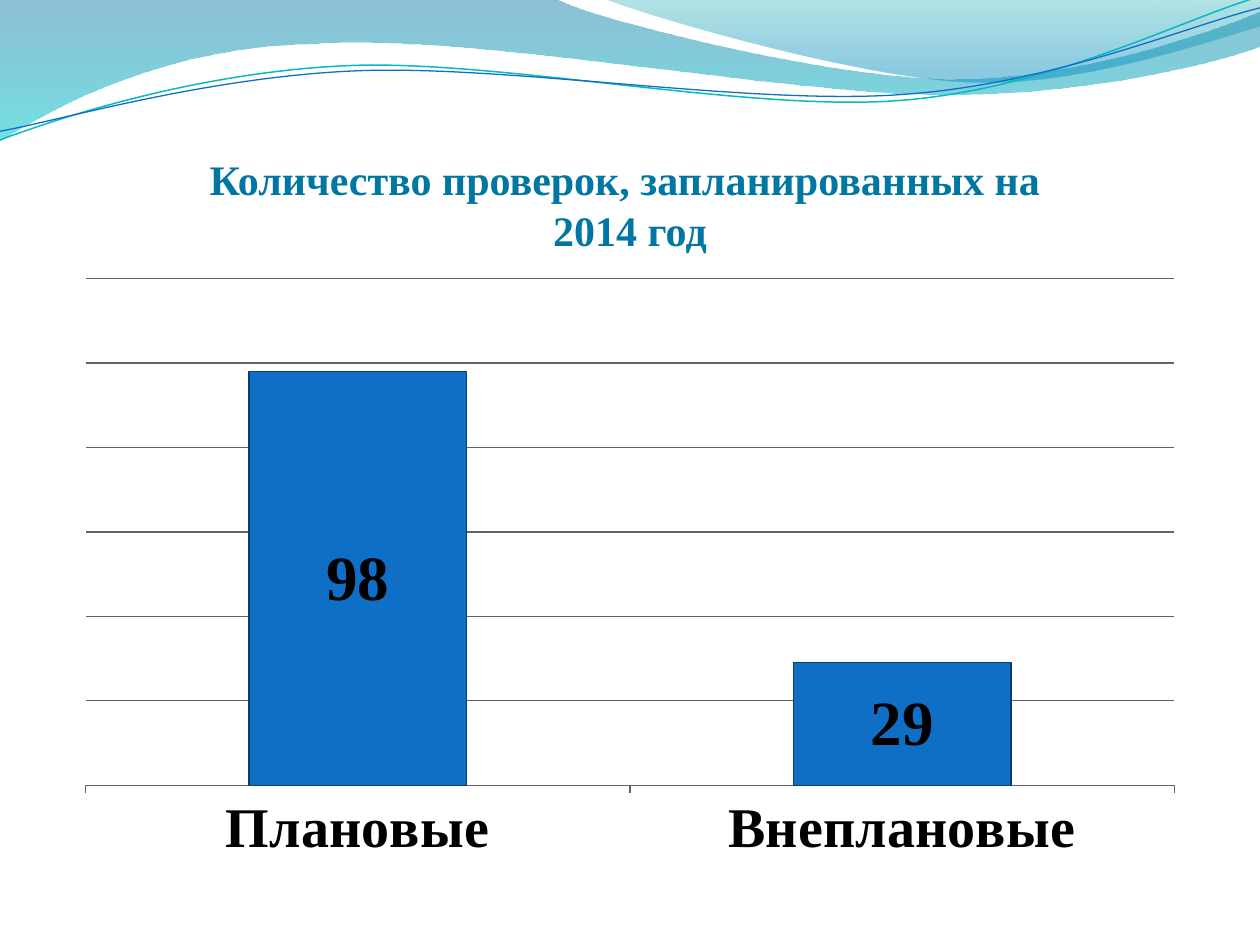
from math import cos, radians, sin

from lxml import etree
from pptx import Presentation
from pptx.chart.data import CategoryChartData
from pptx.dml.color import RGBColor
from pptx.enum.chart import XL_CHART_TYPE, XL_LABEL_POSITION, XL_TICK_LABEL_POSITION, XL_TICK_MARK
from pptx.enum.text import MSO_ANCHOR, PP_ALIGN
from pptx.oxml.ns import qn
from pptx.util import Pt

STACKED = XL_CHART_TYPE.COLUMN_STACKED
LABEL_CENTER = XL_LABEL_POSITION.CENTER
LABELS_LOW = XL_TICK_LABEL_POSITION.LOW
TICK_OUTSIDE, TICK_NONE = XL_TICK_MARK.OUTSIDE, XL_TICK_MARK.NONE
BOTTOM, CENTER = MSO_ANCHOR.BOTTOM, PP_ALIGN.CENTER

TITLE_BLUE = RGBColor(0x00, 0x76, 0xA3)
BLUE = RGBColor(0x0F, 0x6F, 0xC6)
DARK_BLUE = RGBColor(0x0A, 0x3C, 0x6C)
TEAL = RGBColor(0x0A, 0xB8, 0xBF)
BLACK = RGBColor(0x00, 0x00, 0x00)
GRAY = RGBColor(0x64, 0x64, 0x64)
WAVE_TOP, WAVE_BOTTOM = RGBColor(0x00, 0x74, 0xA1), RGBColor(0x00, 0xC6, 0xCF)
CREST_TOP, CREST_BOTTOM = RGBColor(0x00, 0xA1, 0xA9), RGBColor(0x00, 0x8B, 0xBF)
FONT, BODY_FONT = "Times New Roman", "Vollkorn"

# Content
TITLE_LINES = ["Количество проверок, запланированных на ", "2014 год"]
INSPECTIONS = {"Плановые": 98, "Внеплановые": 29}

# Outlines in points: one point is a straight step, three points are a cubic curve
# Gradient stops: position %, colour, opacity %
FILLED_WAVES = [
    {"start": (0, 0),
     "steps": [[(317, -1)],
               [(343, 12), (478, 45), (546, 45)],
               [(614, 45), (690, 19), (720, 6.5)],
               [(721, 26)],
               [(708, 32), (626, 55), (537, 54)],
               [(448, 54), (275, 20), (185, 24.5)],
               [(93, 26), (33, 60), (-1, 81)]],
     "stops": [(0, WAVE_TOP, 45), (100, WAVE_BOTTOM, 55)]},
    {"start": (345, -1),
     "steps": [[(366, 8), (491, 45), (554, 47)],
               [(616, 50), (692, 23), (720, 15)],
               [(720, 0)]],
     "stops": [(0, CREST_TOP, 30), (80, CREST_BOTTOM, 45)]},
]
LINE_TILT = -2.7
LINE_WAVES = [
    {"start": (0, 80),
     "steps": [[(34.5, 67), (114, 41), (199.5, 37.5)],
               [(284.5, 34), (427, 64), (513.5, 57.5)],
               [(600, 51), (675.5, 11), (718.5, -1.5)]],
     "pivot": (359.3, 41.4), "color": TEAL, "width": 0.85},
    {"start": (0, 75),
     "steps": [[(34, 69), (118, 44), (204, 40.5)],
               [(290, 37), (430, 60.5), (516, 54)],
               [(602, 48), (677.5, 15), (720, 4.5)]],
     "pivot": (359.6, 42.5), "color": BLUE, "width": 0.75},
]


def turn(point, pivot, degrees):
    angle = radians(degrees)
    x, y = point[0] - pivot[0], point[1] - pivot[1]
    return (pivot[0] + x * cos(angle) - y * sin(angle),
            pivot[1] + x * sin(angle) + y * cos(angle))


def add_outline(slide, start, steps, close, pivot=(0, 0), tilt=0):
    points = [turn(point, pivot, -tilt) for point in [start, *sum(steps, [])]]
    (start_x, start_y), *others = [(Pt(x), Pt(y)) for x, y in points]
    builder = slide.shapes.build_freeform(start_x, start_y)
    builder.add_line_segments(others, close=close)
    shape = builder.convert_to_shape()
    shape.rotation = tilt
    shape.shadow.inherit = False
    # Join each three points of a curve into one cubic segment
    segments = iter(list(shape._element.iter(qn("a:lnTo"))))
    for step in steps:
        group = [next(segments) for _ in step]
        if len(group) == 3:
            curve = etree.Element(qn("a:cubicBezTo"))
            group[0].addprevious(curve)
            for segment in group:
                curve.append(segment[0])
                segment.getparent().remove(segment)
    return shape


def set_gradient(shape, stops):
    shape.fill.gradient()
    shape.fill.gradient_angle = 270
    stop_list = next(shape._element.iter(qn("a:gsLst")))
    for old_stop in list(stop_list):
        stop_list.remove(old_stop)
    for position, color, opacity in stops:
        stop = etree.SubElement(stop_list, qn("a:gs"), pos=str(position * 1000))
        rgb = etree.SubElement(stop, qn("a:srgbClr"), val=str(color))
        etree.SubElement(rgb, qn("a:alpha"), val=str(opacity * 1000))


def set_font(font, size, color=BLACK, bold=True, name=FONT):
    font.name, font.size, font.bold = name, Pt(size), bold
    font.color.rgb = color


def add_text(slide, lines, left, top, width, height, size, color):
    frame = slide.shapes.add_textbox(Pt(left), Pt(top), Pt(width), Pt(height)).text_frame
    frame.word_wrap = True
    frame.vertical_anchor = BOTTOM
    frame.margin_left = frame.margin_right = frame.margin_bottom = 0
    paragraph = frame.paragraphs[0]
    paragraph.alignment = CENTER
    for number, line in enumerate(lines):
        if number:
            paragraph.add_line_break()
        run = paragraph.add_run()
        run.text = line
        set_font(run.font, size, color)


def add_inspection_chart(slide, left, top, width, height):
    data = CategoryChartData()
    data.categories = list(INSPECTIONS)
    data.add_series("Series 1", list(INSPECTIONS.values()))
    chart = slide.shapes.add_chart(STACKED, Pt(left), Pt(top), Pt(width), Pt(height), data).chart
    chart.has_legend = chart.has_title = False
    set_font(chart.font, 18, bold=False, name=BODY_FONT)

    # Axes
    category_axis, value_axis = chart.category_axis, chart.value_axis
    category_axis.major_tick_mark = TICK_OUTSIDE
    category_axis.minor_tick_mark = TICK_NONE
    category_axis.tick_label_position = LABELS_LOW
    set_font(category_axis.tick_labels.font, 32)
    value_axis.minimum_scale, value_axis.maximum_scale, value_axis.major_unit = 0, 120, 20
    value_axis.has_major_gridlines = True
    value_axis.visible = False
    for line in (category_axis.format.line, value_axis.major_gridlines.format.line):
        line.color.rgb = GRAY
        line.width = Pt(0.75)

    # Columns and their values
    plot = chart.plots[0]
    plot.gap_width, plot.overlap, plot.vary_by_categories = 150, 100, False
    series = plot.series[0]
    series.format.fill.solid()
    series.format.fill.fore_color.rgb = BLUE
    series.format.line.color.rgb = DARK_BLUE
    series.format.line.width = Pt(0.75)
    labels = series.data_labels
    labels.show_value = True
    labels.position = LABEL_CENTER
    set_font(labels.font, 36)


def main():
    presentation = Presentation()
    presentation.slide_width, presentation.slide_height = Pt(720), Pt(540)
    slide = presentation.slides.add_slide(presentation.slide_layouts[6])

    # Waves along the top edge
    for wave in FILLED_WAVES:
        shape = add_outline(slide, wave["start"], wave["steps"], close=True)
        set_gradient(shape, wave["stops"])
        shape.line.fill.background()
    for wave in LINE_WAVES:
        shape = add_outline(slide, wave["start"], wave["steps"], close=False,
                            pivot=wave["pivot"], tilt=LINE_TILT)
        shape.fill.background()
        shape.line.color.rgb = wave["color"]
        shape.line.width = Pt(wave["width"])

    # Title and chart
    add_text(slide, TITLE_LINES, 36, 55.5, 648, 90, size=24, color=TITLE_BLUE)
    add_inspection_chart(slide, 36, 152.4, 648, 345.6)
    presentation.save("out.pptx")


if __name__ == "__main__":
    main()
